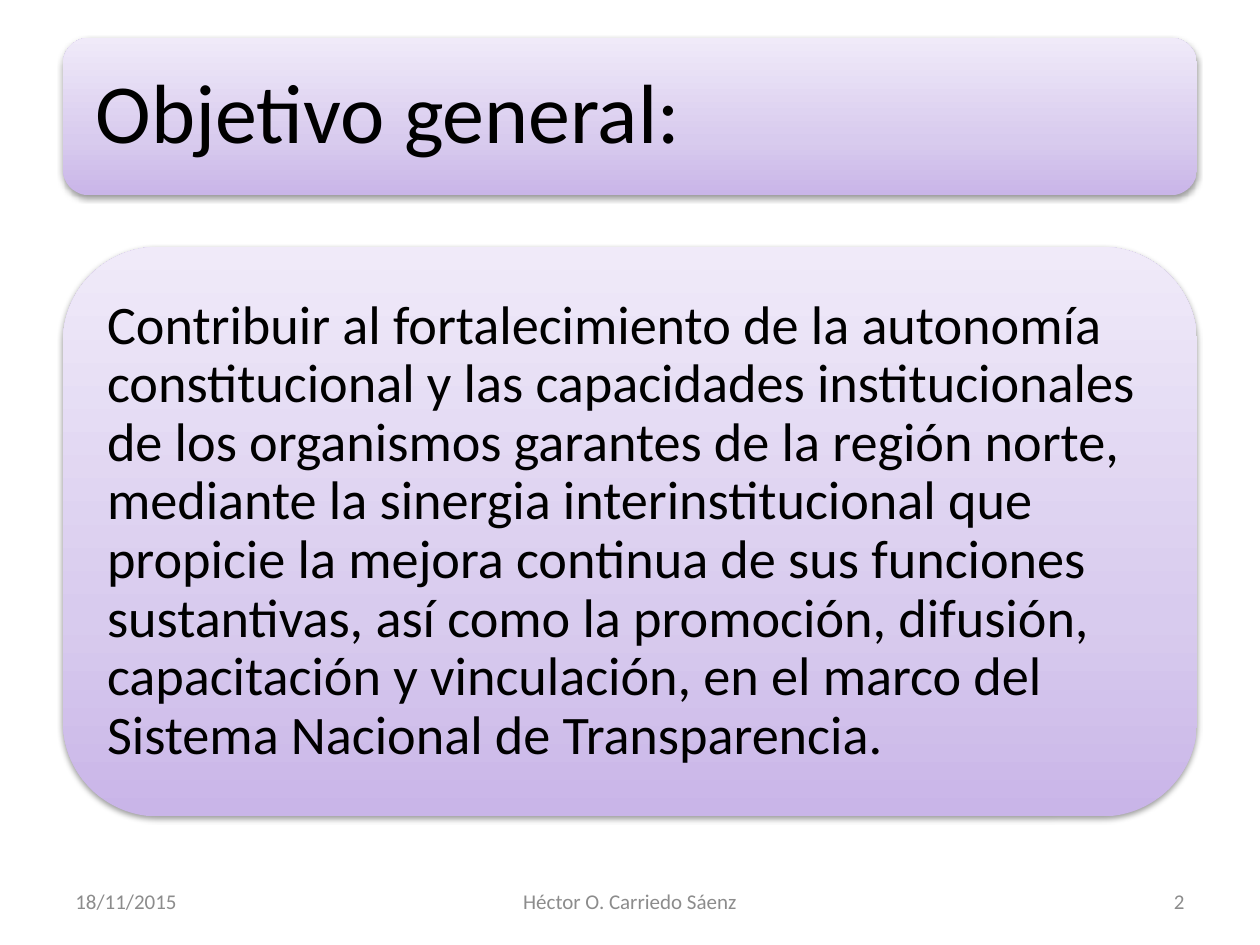
from dataclasses import dataclass

import lxml.etree
import pptx
import pptx.dml.color
import pptx.enum.shapes
import pptx.enum.text
import pptx.oxml.ns
import pptx.util

W, H = 10, 7.5
MARGIN = 0.05 * W
FONT = "Calibri"
GRADIENT = {0: "C9B5E8", 35: "D8CBEE", 100: "F0EAF9"}
ALIGN = pptx.enum.text.PP_ALIGN
qn = pptx.oxml.ns.qn


@dataclass
class Box:
    x: float
    y: float
    w: float
    h: float

    def inset(self, d: float) -> "Box":
        return Box(self.x + d, self.y + d, self.w - 2 * d, self.h - 2 * d)

    def emu(self) -> list:
        return [pptx.util.Inches(v) for v in (self.x, self.y, self.w, self.h)]


@dataclass
class Label:
    text: str
    size: float
    color: str = "000000"
    align: ALIGN = ALIGN.LEFT
    pad_x: float = 0.1
    pad_y: float = 0.05
    spacing: float = 1.0


def rgb(value: str) -> pptx.dml.color.RGBColor:
    return pptx.dml.color.RGBColor.from_string(value)


def sub(parent, tag: str, **attrs):
    return lxml.etree.SubElement(parent, qn(tag), {k: str(v) for k, v in attrs.items()})


def put_text(sp, box: Box, label: Label) -> None:
    sp.left, sp.top, sp.width, sp.height = box.emu()
    tf = sp.text_frame
    pad_x, pad_y = pptx.util.Inches(label.pad_x), pptx.util.Inches(label.pad_y)
    frame = {
        "word_wrap": True,
        "auto_size": pptx.enum.text.MSO_AUTO_SIZE.NONE,
        "vertical_anchor": pptx.enum.text.MSO_ANCHOR.MIDDLE,
        "margin_left": pad_x, "margin_right": pad_x,
        "margin_top": pad_y, "margin_bottom": pad_y,
    }
    for name, value in frame.items():
        setattr(tf, name, value)
    p = tf.paragraphs[0]
    p.alignment, p.line_spacing = label.align, label.spacing
    r = p.add_run()
    r.text = label.text
    r.font.name, r.font.size = FONT, pptx.util.Pt(label.size)
    r.font.color.rgb = rgb(label.color)


def add_card(s, box: Box) -> None:
    sp = s.shapes.add_shape(pptx.enum.shapes.MSO_SHAPE.ROUNDED_RECTANGLE, *box.emu())
    sp.line.fill.background()
    # Gradient, dark at the bottom
    sp.fill.gradient()
    sp.fill.gradient_angle = 90
    spPr = sp.element.spPr
    stops = spPr.find(".//" + qn("a:gsLst"))
    for stop in list(stops):
        stops.remove(stop)
    for pos, color in GRADIENT.items():
        sub(sub(stops, "a:gs", pos=pos * 1000), "a:srgbClr", val=color)
    # Soft shadow below
    sp.shadow.inherit = False
    shadow = sub(spPr.find(qn("a:effectLst")), "a:outerShdw",
                 blurRad=pptx.util.Pt(3.1), dist=pptx.util.Pt(1.6),
                 dir=90 * 60000, rotWithShape=0)
    sub(sub(shadow, "a:srgbClr", val="000000"), "a:alpha", val=38000)


def add_label(s, box: Box, label: Label) -> None:
    put_text(s.shapes.add_textbox(*box.emu()), box, label)


def main() -> None:
    prs = pptx.Presentation()
    prs.slide_width, prs.slide_height = pptx.util.Inches(W), pptx.util.Inches(H)
    s = prs.slides.add_slide(prs.slide_layouts[5])

    # Title on its card, brought in front of it
    card = Box(MARGIN, 0.04 * H, W - 2 * MARGIN, H / 6)
    add_card(s, card)
    title = s.shapes.title
    title.element.getparent().append(title.element)
    put_text(title, card.inset(0.06),
             Label("Objetivo general:", 48, pad_x=0.2, pad_y=0.2, spacing=0.9))

    # Objective
    card = Box(MARGIN, 1.96, W - 2 * MARGIN, 4.52)
    add_card(s, card)
    add_label(s, card.inset(0.22), Label(
        "Contribuir al fortalecimiento de la autonomía constitucional y las "
        "capacidades institucionales de los organismos garantes de la región norte, "
        "mediante la sinergia interinstitucional que propicie la mejora continua de "
        "sus funciones sustantivas, así como la promoción, difusión, capacitación y "
        "vinculación, en el marco del Sistema Nacional de Transparencia.",
        31, pad_x=0.13, pad_y=0.13, spacing=0.9))

    # Footer: left, centred and right
    side, middle = 2.33, 3.17
    footer = [
        ("18/11/2015", MARGIN, side, ALIGN.LEFT),
        ("Héctor O. Carriedo Sáenz", (W - middle) / 2, middle, ALIGN.CENTER),
        ("2", W - MARGIN - side, side, ALIGN.RIGHT),
    ]
    for text, x, w, align in footer:
        add_label(s, Box(x, 6.95, w, 0.4), Label(text, 12, "8C8C8C", align))

    prs.save("out.pptx")


if __name__ == "__main__":
    main()
